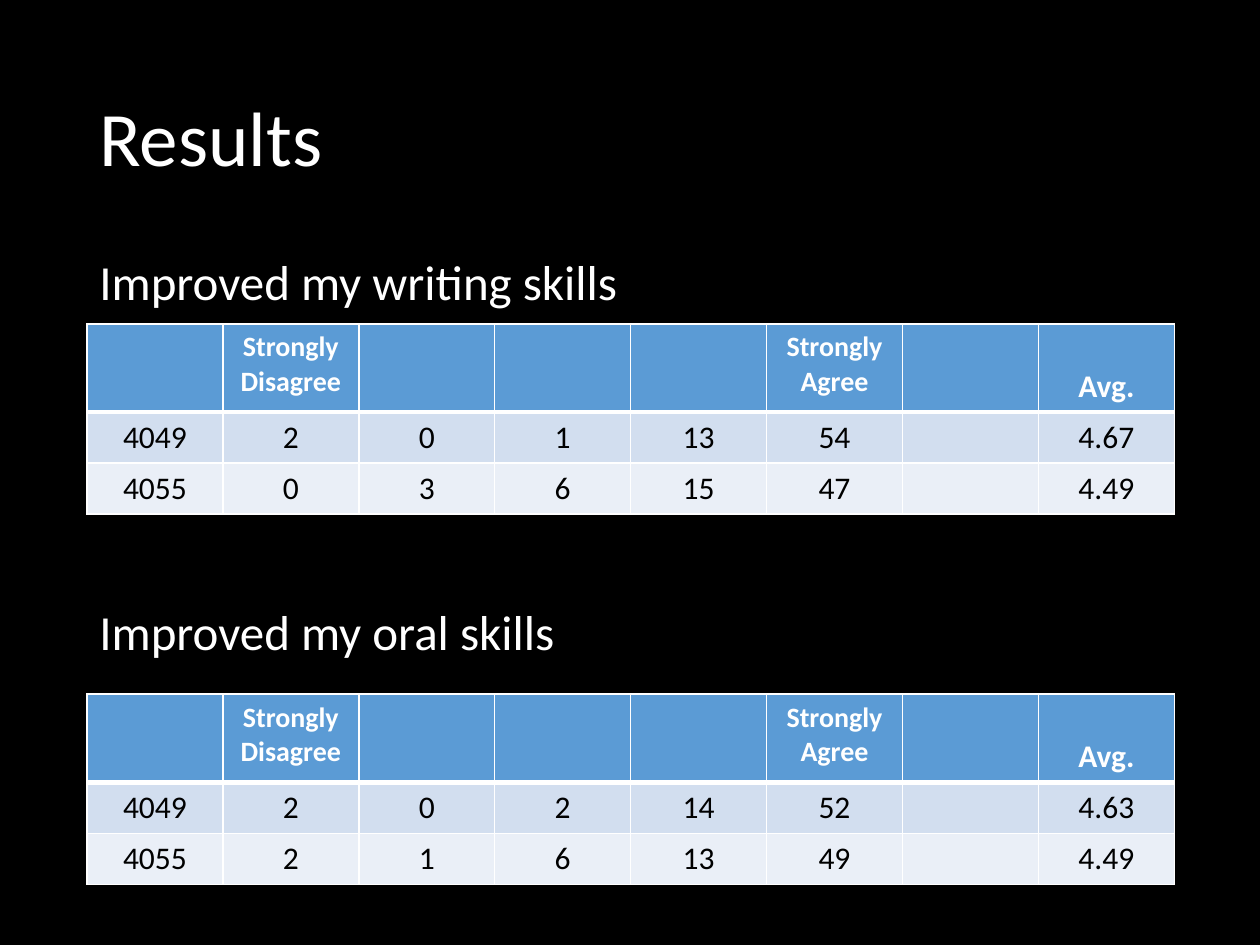
from lxml import etree
from pptx import Presentation
from pptx.dml.color import RGBColor
from pptx.enum.text import MSO_ANCHOR, PP_ALIGN
from pptx.oxml.ns import qn
from pptx.util import Inches, Pt

CENTER = PP_ALIGN.CENTER
TOP, MIDDLE, BOTTOM = MSO_ANCHOR.TOP, MSO_ANCHOR.MIDDLE, MSO_ANCHOR.BOTTOM
COLORS = {
    "background": "000000",
    "light": "FFFFFF",
    "dark": "000000",
    "header": "5B9BD5",
    "odd": "D2DEEF",
    "even": "EAEFF7",
}
LEFT = 0.69
HEADER = ["", "Strongly Disagree", "", "", "", "Strongly Agree", "", "Avg."]
WRITING = [
    ["4049", "2", "0", "1", "13", "54", "", "4.67"],
    ["4055", "0", "3", "6", "15", "47", "", "4.49"],
]
ORAL = [
    ["4049", "2", "0", "2", "14", "52", "", "4.63"],
    ["4055", "2", "1", "6", "13", "49", "", "4.49"],
]


class ResultsPage:
    """Holds the style and the current slide."""

    font = "Calibri"

    def __init__(self, deck):
        self.page = deck.slides.add_slide(deck.slide_layouts[6])
        fill = self.page.background.fill
        fill.solid()
        fill.fore_color.rgb = self.color("background")

    def color(self, name):
        return RGBColor.from_string(COLORS[name])

    def span(self, para, text, size, color="light", bold=False):
        span = para.add_run()
        span.text = text
        span.font.name = self.font
        span.font.size = Pt(size)
        span.font.bold = bold
        span.font.color.rgb = self.color(color)

    def text(self, lines, top, height, size, anchor=TOP, gap=0):
        """Add a text box whose lines are kept apart by gap points."""
        box = self.page.shapes.add_textbox(
            Inches(LEFT), Inches(top), Inches(8.62), Inches(height))
        frame = box.text_frame
        frame.word_wrap = True
        frame.vertical_anchor = anchor
        for index, line in enumerate(lines):
            para = frame.add_paragraph() if index else frame.paragraphs[0]
            para.line_spacing = 0.9
            para.space_before = Pt(gap if index else 0)
            self.span(para, line, size)

    def borders(self, cell, bottom):
        """Draw white borders; they must come before the cell's fill."""
        props = cell._tc.get_or_add_tcPr()
        for side, width in (("L", 1), ("R", 1), ("T", 1), ("B", bottom)):
            line = etree.SubElement(props, qn(f"a:ln{side}"), w=str(Pt(width)))
            solid = etree.SubElement(line, qn("a:solidFill"))
            etree.SubElement(solid, qn("a:srgbClr"), val=COLORS["light"])

    def cell(self, cell, text, is_header, fill):
        self.borders(cell, 3 if is_header else 1)
        cell.fill.solid()
        cell.fill.fore_color.rgb = self.color(fill)
        is_average = text == "Avg."
        cell.vertical_anchor = BOTTOM if is_average else TOP
        para = cell.text_frame.paragraphs[0]
        para.alignment = CENTER
        if text:
            size = 16 if is_header and not is_average else 18
            self.span(para, text, size, "light" if is_header else "dark", is_header)

    def table(self, rows, top):
        heights = [0.7] + [0.405] * len(rows)
        table = self.page.shapes.add_table(
            len(heights), len(HEADER), Inches(LEFT), Inches(top),
            Inches(8.63), Inches(sum(heights))).table
        fills = ["header", "odd", "even"]
        for row, height, values, fill in zip(table.rows, heights, [HEADER] + rows, fills):
            row.height = Inches(height)
            for cell, value in zip(row.cells, values):
                self.cell(cell, value, fill == "header", fill)


def main():
    deck = Presentation()
    deck.slide_width, deck.slide_height = Inches(10), Inches(7.5)
    results = ResultsPage(deck)
    results.text(["Results"], 0.4, 1.45, 44, MIDDLE)
    results.text(["Improved my writing skills", "Improved my oral skills"],
                 2, 4.76, 28, gap=170)
    results.table(ORAL, 5.51)
    results.table(WRITING, 2.57)
    deck.save("out.pptx")


if __name__ == "__main__":
    main()
